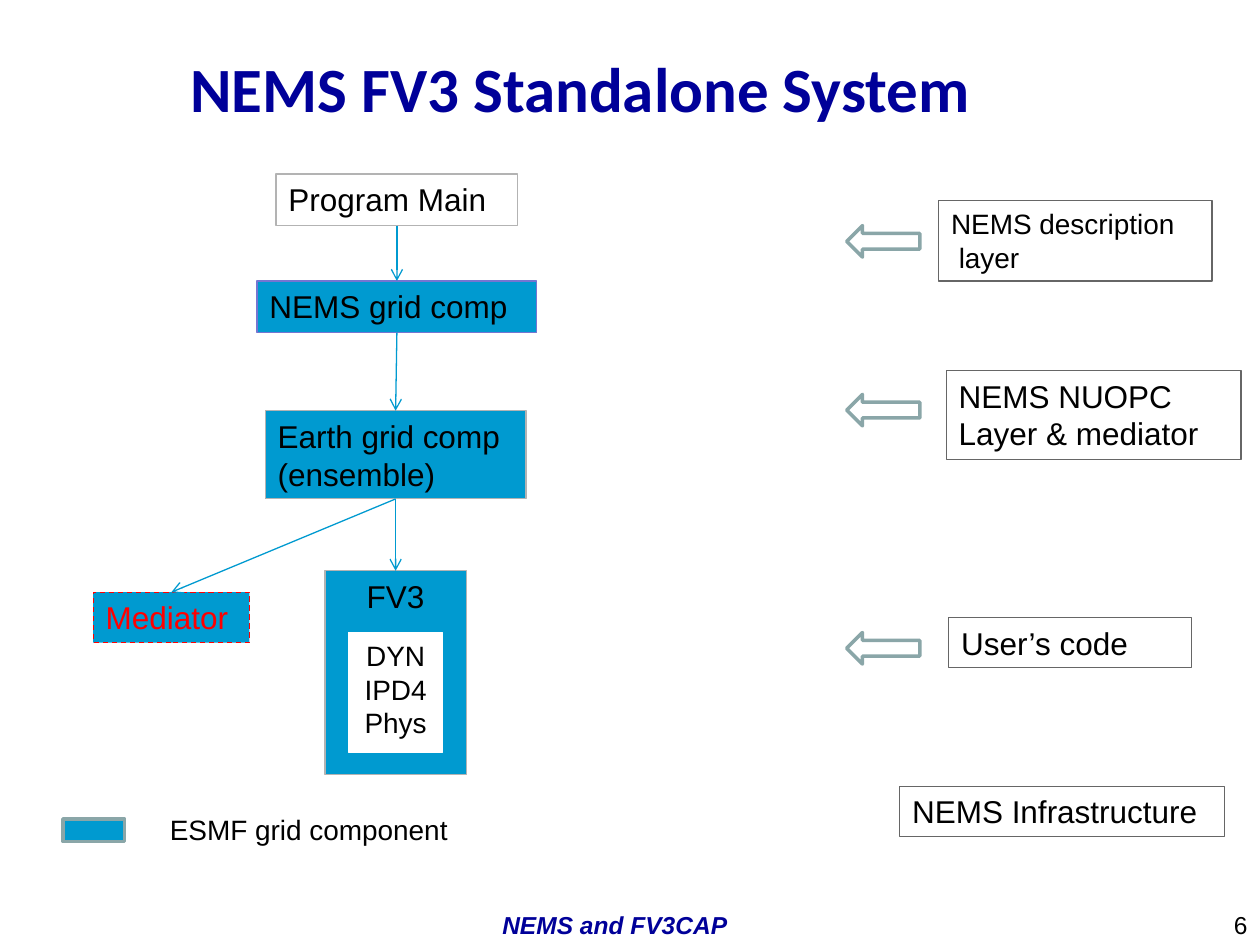
from dataclasses import dataclass
from pptx import Presentation
from pptx.dml.color import RGBColor
from pptx.enum.dml import MSO_LINE
from pptx.enum.shapes import MSO_CONNECTOR, MSO_SHAPE
from pptx.enum.text import MSO_ANCHOR, PP_ALIGN
from pptx.oxml.ns import qn
from pptx.util import Inches, Pt
from lxml.etree import SubElement


@dataclass(frozen=True)
class Theme:
    navy: str = "000099"
    blue: str = "009AD0"
    violet: str = "7575D1"
    teal: str = "8AA6A8"
    dark: str = "666666"
    light: str = "B3B3B3"
    red: str = "FF0000"
    black: str = "000000"
    white: str = "FFFFFF"
    head: str = "Calibri"
    body: str = "Arial"
    title: int = 36
    large: int = 18
    medium: int = 16
    small: int = 14
    thin: float = 0.75
    thick: float = 2


T = Theme()
COLS, ROWS = 100, 75
BOTTOM, TOP = 2, 0


class Diagram:
    def __init__(self, prs):
        self.s = prs.slides.add_slide(prs.slide_layouts[6])
        self.cell_w = prs.slide_width / COLS
        self.cell_h = prs.slide_height / ROWS

    def place(self, col, row, cols, rows):
        return (round(col * self.cell_w), round(row * self.cell_h),
                round(cols * self.cell_w), round(rows * self.cell_h))

    def label(self, sp, text, size, color=T.black, align=PP_ALIGN.LEFT, face=T.body, **style):
        tf = sp.text_frame
        tf.word_wrap = True
        tf.vertical_anchor = MSO_ANCHOR.TOP
        for i, line in enumerate(text.split("\n")):
            p = tf.paragraphs[0] if i == 0 else tf.add_paragraph()
            p.alignment = align
            r = p.add_run()
            r.text = line
            r.font.color.rgb = RGBColor.from_string(color)
            for name, value in {"name": face, "size": Pt(size), **style}.items():
                setattr(r.font, name, value)

    def text(self, area, text, size, **style):
        sp = self.s.shapes.add_textbox(*self.place(*area))
        self.label(sp, text, size, **style)

    def shape(self, area, line, fill=None, width=T.thin, kind=MSO_SHAPE.RECTANGLE, dash=None):
        sp = self.s.shapes.add_shape(kind, *self.place(*area))
        sp.shadow.inherit = False
        if fill:
            sp.fill.solid()
            sp.fill.fore_color.rgb = RGBColor.from_string(fill)
        else:
            sp.fill.background()
        sp.line.color.rgb = RGBColor.from_string(line)
        for name, value in {"width": Pt(width), "dash_style": dash}.items():
            setattr(sp.line, name, value)
        return sp

    def box(self, area, text, line, fill=None, size=T.large, dash=None, **style):
        sp = self.shape(area, line, fill, dash=dash)
        self.label(sp, text, size, **style)
        return sp

    def arrow(self, start, end):
        c = self.s.shapes.add_connector(MSO_CONNECTOR.STRAIGHT, 0, 0, 0, 0)
        c.begin_connect(start, BOTTOM)
        c.end_connect(end, TOP)
        c.line.color.rgb = RGBColor.from_string(T.blue)
        c.line.width = Pt(T.thin)
        props = c.element.spPr
        SubElement(props.find(qn("a:ln")), qn("a:tailEnd"), type="arrow")
        SubElement(props, qn("a:effectLst"))


def main():
    prs = Presentation()
    prs.slide_width, prs.slide_height = Inches(10), Inches(7.5)
    d = Diagram(prs)

    d.text((14.1, 3.4, 70.9, 7.1), "NEMS FV3 Standalone System", T.title,
           color=T.navy, face=T.head, bold=True)

    layers = [
        ((74.5, 15.9, 21.7, 6.4), "NEMS description\n layer", T.medium),
        ((75.1, 29.4, 23.4, 7.1), "NEMS NUOPC\nLayer & mediator", T.large),
        ((75.3, 49, 19.3, 4), "User’s code", T.large),
        ((71.4, 62.4, 25.8, 4), "NEMS Infrastructure", T.large),
    ]
    for area, text, size in layers:
        d.box(area, text, T.dark, size=size)
    for row in (17.9, 31.3, 50.2):
        d.shape((67.2, row, 5.8, 2.5), T.teal, width=T.thick, kind=MSO_SHAPE.LEFT_ARROW)

    program = d.box((21.9, 13.8, 19.2, 4.1), "Program Main", T.light)
    nems = d.box((20.4, 22.3, 22.2, 4.1), "NEMS grid comp", T.violet, T.blue)
    earth = d.box((21.05, 32.6, 20.7, 7), "Earth grid comp\n(ensemble)", T.light, T.blue)
    fv3 = d.box((25.8, 45.3, 11.2, 16.2), "FV3", T.light, T.blue, align=PP_ALIGN.CENTER)
    mediator = d.box((7.4, 47, 12.4, 4), "Mediator", T.red, T.blue,
                     dash=MSO_LINE.DASH, color=T.red)
    d.box((27.65, 50.2, 7.5, 9.5), "DYN\nIPD4\nPhys", T.white, T.white,
          size=T.medium, align=PP_ALIGN.CENTER)
    for start, end in ((program, nems), (nems, earth), (earth, fv3), (earth, mediator)):
        d.arrow(start, end)

    d.shape((5, 65, 4.9, 1.8), T.teal, T.blue, T.thick)
    d.text((12.5, 64, 24.7, 3.7), "ESMF grid component", T.medium)

    d.text((9.2, 71.7, 79.2, 3.3), "NEMS and FV3CAP", T.small, color=T.navy,
           align=PP_ALIGN.CENTER, bold=True, italic=True)
    d.text((76.7, 71.7, 23.3, 3.3), "6", T.small, align=PP_ALIGN.RIGHT)

    prs.save("out.pptx")


if __name__ == "__main__":
    main()
